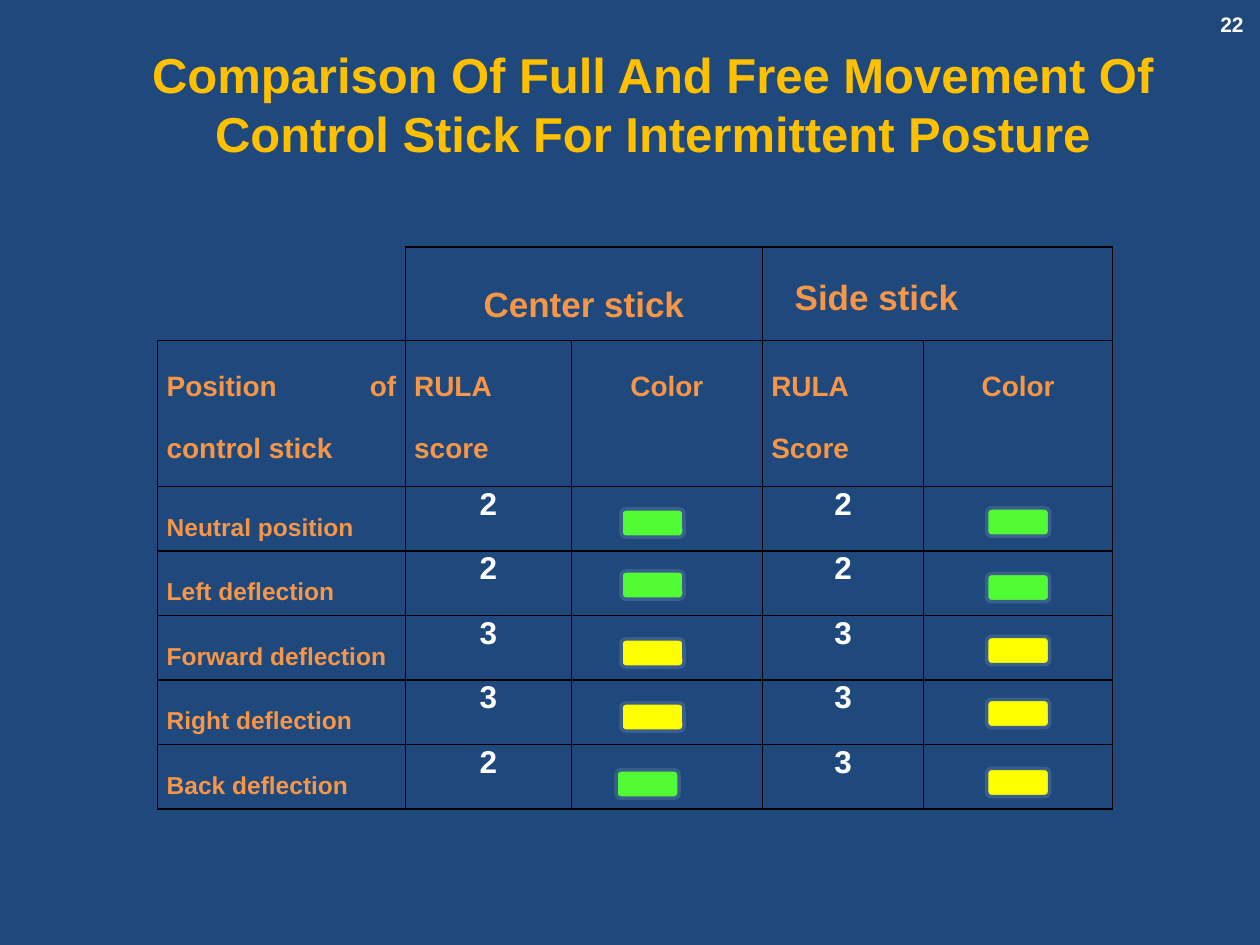
from lxml import etree
from pptx import Presentation
from pptx.dml.color import RGBColor
from pptx.enum.shapes import MSO_SHAPE
from pptx.enum.text import MSO_ANCHOR, PP_ALIGN
from pptx.oxml.ns import qn
from pptx.util import Cm, Pt

CENTER, RIGHT, JUSTIFY = PP_ALIGN.CENTER, PP_ALIGN.RIGHT, PP_ALIGN.JUSTIFY
MIDDLE, TOP = MSO_ANCHOR.MIDDLE, MSO_ANCHOR.TOP
ROUNDED = MSO_SHAPE.ROUNDED_RECTANGLE

NAVY = RGBColor(0x1F, 0x49, 0x7D)
GOLD = RGBColor(0xFF, 0xC0, 0x00)
ORANGE = RGBColor(0xF7, 0x96, 0x46)
WHITE = RGBColor(0xFF, 0xFF, 0xFF)
BLACK = RGBColor(0x00, 0x00, 0x00)
GREEN = RGBColor(0x51, 0xFC, 0x34)
YELLOW = RGBColor(0xFF, 0xFF, 0x00)
CHIP_EDGE = RGBColor(0x3A, 0x5F, 0x8C)

TITLE = "Comparison Of Full And Free Movement Of Control Stick For Intermittent Posture"
COLUMN_WIDTHS = (4.99, 3.35, 3.85, 3.25, 3.81)
ROW_HEIGHTS = (1.88, 2.95) + (1.3,) * 5
HEADERS = (
    ("Position of control stick", JUSTIFY),
    ("RULA score", JUSTIFY),
    ("Color", CENTER),
    ("RULA Score", JUSTIFY),
    ("Color", CENTER),
)
# Position, then score and chip offset (left, top) within the table for each stick
POSTURES = (
    ("Neutral position", (2, 9.34, 5.28), (2, 16.71, 5.26)),
    ("Left deflection", (2, 9.34, 6.53), (2, 16.71, 6.58)),
    ("Forward deflection", (3, 9.34, 7.9), (3, 16.71, 7.85)),
    ("Right deflection", (3, 9.34, 9.19), (3, 16.71, 9.12)),
    ("Back deflection", (2, 9.24, 10.54), (3, 16.71, 10.51)),
)
SCORE_COLORS = {2: GREEN, 3: YELLOW}


def write(text_frame, text, size, color, alignment, line_spacing=None):
    text_frame.text = text
    paragraph = text_frame.paragraphs[0]
    paragraph.alignment = alignment
    if line_spacing:
        paragraph.line_spacing = line_spacing
    for run in paragraph.runs:
        run.font.name = "Arial"
        run.font.size = Pt(size)
        run.font.bold = True
        run.font.color.rgb = color
    return paragraph


def add_text(slide, box, text, size, color, alignment, anchor=MIDDLE, wrap=True):
    text_frame = slide.shapes.add_textbox(*(Cm(length) for length in box)).text_frame
    text_frame.word_wrap = wrap
    text_frame.vertical_anchor = anchor
    return write(text_frame, text, size, color, alignment)


def add_title(slide, box):
    paragraph = add_text(slide, box, TITLE, 28, GOLD, CENTER)
    # A closing line break at 44 pt lifts the title within its box
    paragraph.add_line_break()
    etree.SubElement(paragraph._p, qn("a:endParaRPr"), sz="4400")


def set_borders(cell, visible_sides):
    properties = cell._tc.get_or_add_tcPr()
    for side in "LRTB":
        line = etree.SubElement(properties, qn(f"a:ln{side}"), w=str(Pt(1)))
        if side in visible_sides:
            fill = etree.SubElement(line, qn("a:solidFill"))
            etree.SubElement(fill, qn("a:srgbClr"), val=str(BLACK))
        else:
            etree.SubElement(line, qn("a:noFill"))


def fill_cell(cell, text, size, color, alignment, line_spacing=None):
    cell.margin_left = cell.margin_right = Cm(0.18)
    cell.margin_top = cell.margin_bottom = 0
    write(cell.text_frame, text, size, color, alignment, line_spacing)


def add_chip(slide, left, top, color):
    chip = slide.shapes.add_shape(ROUNDED, Cm(left), Cm(top), Cm(1.27), Cm(0.57))
    chip.shadow.inherit = False
    chip.fill.solid()
    chip.fill.fore_color.rgb = color
    chip.line.color.rgb = CHIP_EDGE
    chip.line.width = Pt(2)


def add_comparison(slide, left, top):
    # Grid
    table = slide.shapes.add_table(
        len(ROW_HEIGHTS), len(COLUMN_WIDTHS), Cm(left), Cm(top),
        Cm(sum(COLUMN_WIDTHS)), Cm(sum(ROW_HEIGHTS))).table
    table.first_row = table.horz_banding = False
    for column, width in zip(table.columns, COLUMN_WIDTHS):
        column.width = Cm(width)
    for row, height in zip(table.rows, ROW_HEIGHTS):
        row.height = Cm(height)
    for index, cell in enumerate(table.iter_cells()):
        set_borders(cell, "LRTB" if index else "RB")
        cell.fill.background()

    # Stick headings
    for first in (1, 3):
        table.cell(0, first).merge(table.cell(0, first + 1))
    fill_cell(table.cell(0, 1), "Center stick", 20, ORANGE, CENTER, 2.0)
    heading = add_text(slide, (left + 12.57, top + 0.4, 3.84, 1.17),
                       "Side stick", 20, ORANGE, CENTER, TOP, False)
    heading.line_spacing = 1.07
    heading.space_after = Pt(8)

    # Column headings
    for column, (text, alignment) in enumerate(HEADERS):
        fill_cell(table.cell(1, column), text, 16, ORANGE, alignment, 2.0)

    # Scores and their color chips
    for row, (position, *sticks) in enumerate(POSTURES, start=2):
        fill_cell(table.cell(row, 0), position, 14, ORANGE, JUSTIFY, 2.0)
        for column, (score, chip_left, chip_top) in zip((1, 3), sticks):
            fill_cell(table.cell(row, column), str(score), 18, WHITE, CENTER)
            add_chip(slide, left + chip_left, top + chip_top, SCORE_COLORS[score])


def main():
    presentation = Presentation()
    presentation.slide_width, presentation.slide_height = Cm(25.4), Cm(19.05)
    slide = presentation.slides.add_slide(presentation.slide_layouts[6])
    slide.background.fill.solid()
    slide.background.fill.fore_color.rgb = NAVY

    add_title(slide, (1.73, 1.42, 22.86, 3.18))
    add_text(slide, (23.62, -0.03, 1.7, 1.02), "22", 12, WHITE, RIGHT)
    add_comparison(slide, 3.18, 4.98)
    presentation.save("out.pptx")


if __name__ == "__main__":
    main()
